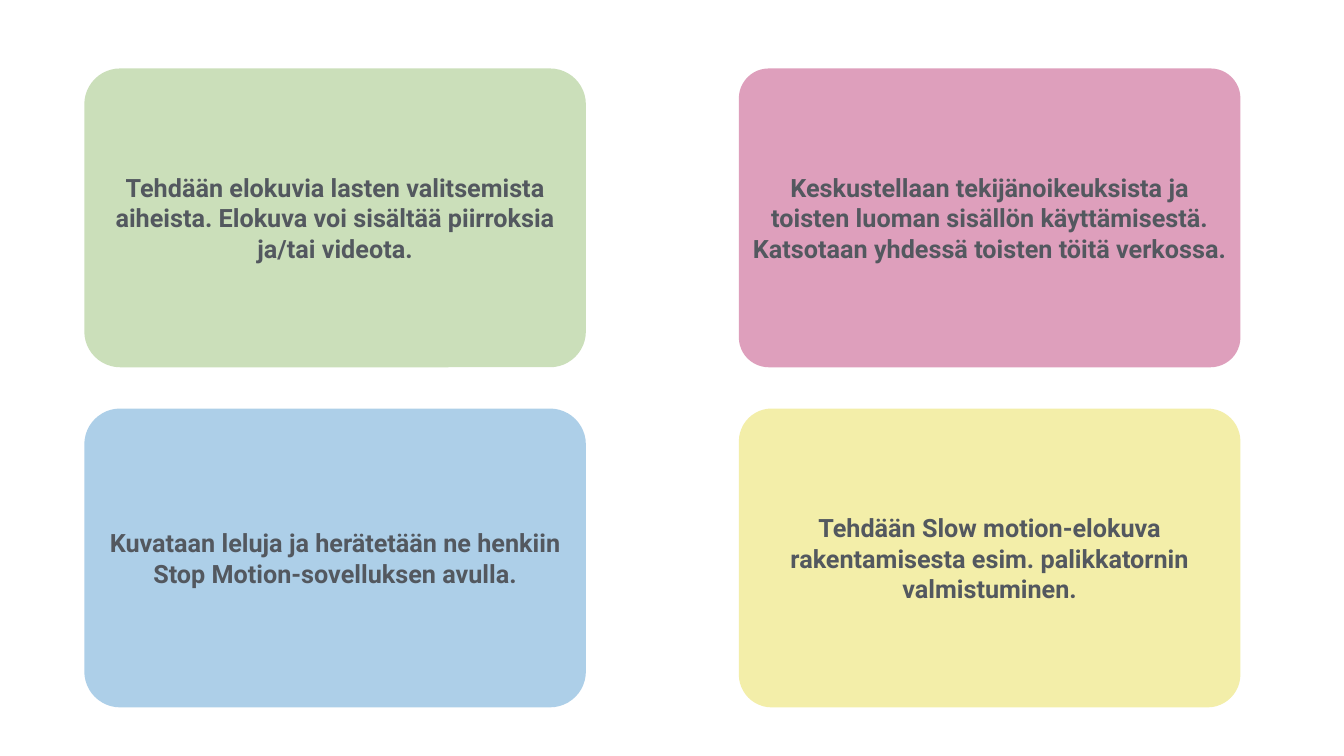
from typing import NamedTuple

from pptx import Presentation
from pptx.dml.color import RGBColor
from pptx.enum.shapes import MSO_SHAPE
from pptx.enum.text import MSO_ANCHOR, PP_ALIGN
from pptx.slide import Slide
from pptx.text.text import TextFrame
from pptx.util import Cm, Pt

COLORS = {
    "green": "CBDFBA",
    "pink": "DE9FBC",
    "blue": "ADCFE8",
    "yellow": "F3EEA9",
    "text": "53585F",
}
BLANK_LAYOUT = 6
GRID_LEFT, GRID_TOP = 4.25, 3.45
COLUMN_STEP, ROW_STEP = 32.99, 17.14
CARD_WIDTH, CARD_HEIGHT = 25.28, 15.06
TEXT_INSET = Cm(0.15)


class Card(NamedTuple):
    column: int
    row: int
    color: str
    corner: float
    text: str


CARDS = [
    Card(0, 0, "green", 0.12,
         "Tehdään elokuvia lasten valitsemista aiheista. "
         "Elokuva voi sisältää piirroksia ja/tai videota."),
    Card(1, 0, "pink", 0.1,
         "Keskustellaan tekijänoikeuksista ja toisten luoman sisällön "
         "käyttämisestä. Katsotaan yhdessä toisten töitä verkossa."),
    Card(0, 1, "blue", 0.12,
         "Kuvataan leluja ja herätetään ne henkiin Stop Motion-sovelluksen avulla."),
    Card(1, 1, "yellow", 0.11,
         "Tehdään Slow motion-elokuva rakentamisesta esim. palikkatornin "
         "valmistuminen."),
]


def write_text(frame: TextFrame, text: str, *, size: float = 36,
               font: str = "Roboto", bold: bool = True, color: str = "text",
               align: PP_ALIGN = PP_ALIGN.CENTER) -> None:
    frame.word_wrap = True
    frame.vertical_anchor = MSO_ANCHOR.MIDDLE
    frame.margin_left = frame.margin_right = TEXT_INSET
    frame.margin_top = frame.margin_bottom = TEXT_INSET
    paragraph = frame.paragraphs[0]
    paragraph.alignment = align
    run = paragraph.add_run()
    run.text = text
    run.font.size = Pt(size)
    run.font.name = font
    run.font.bold = bold
    run.font.color.rgb = RGBColor.from_string(COLORS[color])


def draw_card(slide: Slide, card: Card) -> None:
    shape = slide.shapes.add_shape(
        MSO_SHAPE.ROUNDED_RECTANGLE,
        Cm(GRID_LEFT + card.column * COLUMN_STEP),
        Cm(GRID_TOP + card.row * ROW_STEP),
        Cm(CARD_WIDTH),
        Cm(CARD_HEIGHT),
    )
    shape.adjustments[0] = card.corner
    shape.shadow.inherit = False
    shape.fill.solid()
    shape.fill.fore_color.rgb = RGBColor.from_string(COLORS[card.color])
    shape.line.fill.background()
    write_text(shape.text_frame, card.text)


def main() -> None:
    presentation = Presentation()
    presentation.slide_width = Cm(67.74)
    presentation.slide_height = Cm(38.1)
    slide = presentation.slides.add_slide(presentation.slide_layouts[BLANK_LAYOUT])
    for card in CARDS:
        draw_card(slide, card)
    presentation.save("out.pptx")


if __name__ == "__main__":
    main()
